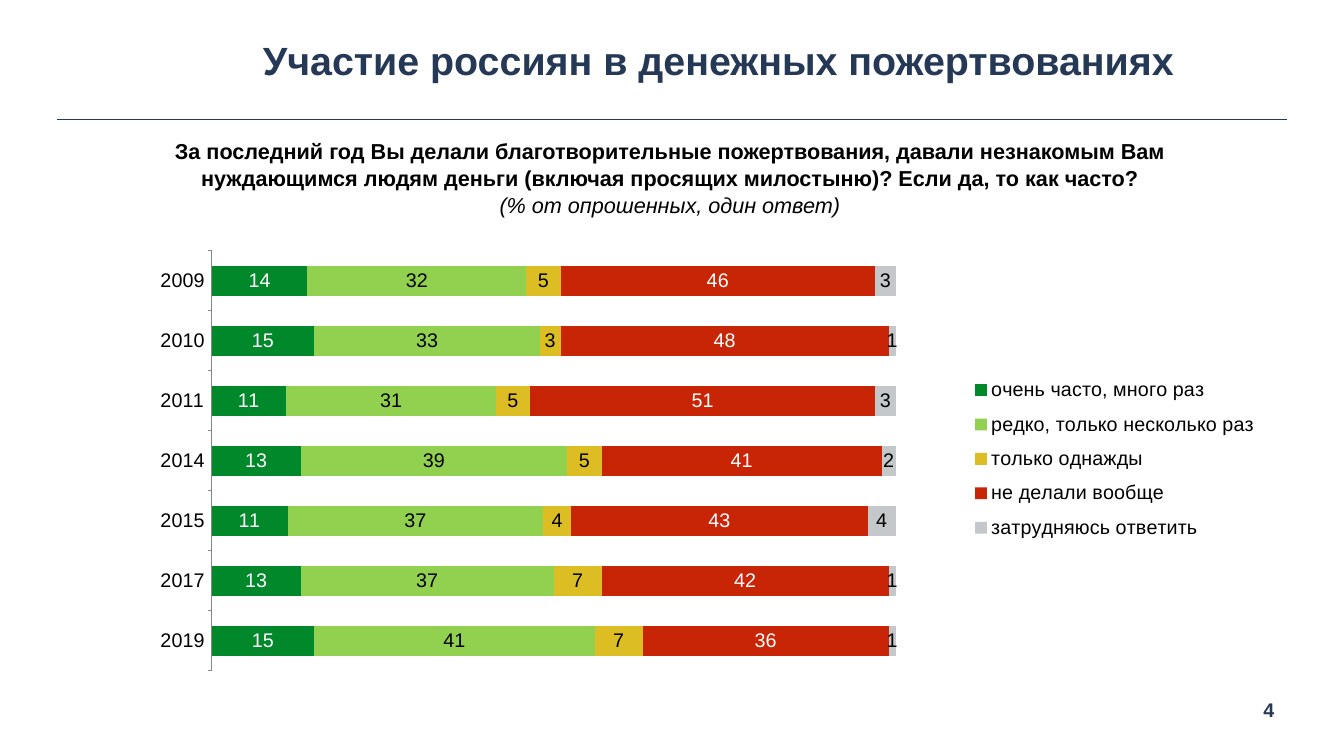
from pptx import Presentation
from pptx.chart.data import CategoryChartData
from pptx.dml.color import RGBColor
from pptx.enum.chart import XL_CHART_TYPE, XL_LEGEND_POSITION, XL_TICK_LABEL_POSITION, XL_TICK_MARK
from pptx.enum.shapes import MSO_CONNECTOR
from pptx.enum.text import MSO_ANCHOR, PP_ALIGN
from pptx.oxml import parse_xml
from pptx.oxml.ns import nsdecls
from pptx.util import Pt

BARS = XL_CHART_TYPE.BAR_STACKED_100
RIGHT = XL_LEGEND_POSITION.RIGHT
LOW = XL_TICK_LABEL_POSITION.LOW
OUTSIDE, NO_TICK = XL_TICK_MARK.OUTSIDE, XL_TICK_MARK.NONE
STRAIGHT = MSO_CONNECTOR.STRAIGHT
TOP, MIDDLE = MSO_ANCHOR.TOP, MSO_ANCHOR.MIDDLE
CENTER = PP_ALIGN.CENTER

NAVY = RGBColor(0x25, 0x39, 0x57)
BLACK = RGBColor(0x00, 0x00, 0x00)
WHITE = RGBColor(0xFF, 0xFF, 0xFF)
GRAY = RGBColor(0x86, 0x86, 0x86)
GREEN = RGBColor(0x00, 0x88, 0x2B)
LIME = RGBColor(0x92, 0xD0, 0x50)
GOLD = RGBColor(0xDC, 0xBD, 0x23)
RED = RGBColor(0xC8, 0x25, 0x06)
SILVER = RGBColor(0xC4, 0xC8, 0xCB)

FONT = "Arial"
WIDTH, HEIGHT = 1365.12, 768.24
YEARS = ["2019", "2017", "2015", "2014", "2011", "2010", "2009"]
ANSWERS = [
    ("очень часто, много раз", GREEN, WHITE, [15, 13, 11, 13, 11, 15, 14]),
    ("редко, только несколько раз", LIME, BLACK, [41, 37, 37, 39, 31, 33, 32]),
    ("только однажды", GOLD, BLACK, [7, 7, 4, 5, 5, 3, 5]),
    ("не делали вообще", RED, WHITE, [36, 42, 43, 41, 51, 48, 46]),
    ("затрудняюсь ответить", SILVER, BLACK, [1, 1, 4, 2, 3, 1, 3]),
]
TITLE = "Участие россиян в денежных пожертвованиях"
QUERY = ("За последний год Вы делали благотворительные пожертвования, "
         "давали незнакомым Вам нуждающимся людям деньги "
         "(включая просящих милостыню)? Если да, то как часто?")
BASE = "(% от опрошенных, один ответ)"


def style(font, size, color, bold=False, italic=False):
    font.name = FONT
    font.size = Pt(size)
    font.color.rgb = color
    font.bold = bold
    font.italic = italic


def add_text(slide, box, text, size, color, anchor=TOP, wrap=True):
    frame = slide.shapes.add_textbox(*map(Pt, box)).text_frame
    frame.word_wrap = wrap
    frame.vertical_anchor = anchor
    frame.margin_left = frame.margin_right = Pt(6.5)
    frame.margin_top = frame.margin_bottom = Pt(6.5)
    frame.text = text
    for para in frame.paragraphs:
        para.alignment = CENTER
        for run in para.runs:
            style(run.font, size, color, bold=True)
    return frame


def add_header(slide, box):
    left, top, width, height = box
    add_text(slide, (left + 96.5, top, width - 99.5, 76.3), TITLE, 40, NAVY, MIDDLE)
    base = top + height
    rule = slide.shapes.add_connector(
        STRAIGHT, Pt(left), Pt(base), Pt(left + width), Pt(base))
    rule.line.color.rgb = NAVY
    rule.line.width = Pt(1)
    rule._element.spPr.append(parse_xml(f"<a:effectLst {nsdecls('a')}/>"))


def add_query(slide, box):
    frame = add_text(slide, box, f"{QUERY}\n{BASE}", 22, BLACK)
    for para in frame.paragraphs:
        para.line_spacing = 1.05
    style(frame.paragraphs[1].runs[0].font, 22, BLACK, italic=True)


def make_layout(x, y, w, h, inner=False):
    target = '<c:layoutTarget val="inner"/>' if inner else ""
    return parse_xml(
        f"<c:layout {nsdecls('c')}><c:manualLayout>{target}"
        '<c:xMode val="edge"/><c:yMode val="edge"/>'
        f'<c:x val="{x}"/><c:y val="{y}"/><c:w val="{w}"/><c:h val="{h}"/>'
        "</c:manualLayout></c:layout>")


def set_layout(parent, layout, index):
    for old in parent.findall(layout.tag):
        parent.remove(old)
    parent.insert(index, layout)


def add_bars(slide, box):
    data = CategoryChartData(number_format="0")
    data.categories = YEARS
    for name, _, _, values in ANSWERS:
        data.add_series(name, values)
    chart = slide.shapes.add_chart(BARS, *map(Pt, box), data).chart
    style(chart.font, 20, BLACK)
    chart.has_title = False
    plot = chart.plots[0]
    plot.gap_width = 100
    plot.overlap = 100
    plot.vary_by_categories = False

    for series, (_, fill, ink, _) in zip(plot.series, ANSWERS):
        series.format.fill.solid()
        series.format.fill.fore_color.rgb = fill
        labels = series.data_labels
        labels.show_value = True
        labels.number_format = "0"
        labels.number_format_is_linked = False
        style(labels.font, 20, ink)

    years = chart.category_axis
    years.major_tick_mark = OUTSIDE
    years.minor_tick_mark = NO_TICK
    years.tick_label_position = LOW
    years.format.line.color.rgb = GRAY
    years.format.line.width = Pt(0.75)
    chart.value_axis.visible = False
    chart.value_axis.has_major_gridlines = False

    chart.has_legend = True
    legend = chart.legend
    legend.position = RIGHT
    legend.include_in_layout = False
    style(legend.font, 20, BLACK)
    set_layout(legend._element, make_layout(0.72, 0.27, 0.27, 0.43), 1)
    area = chart._chartSpace.chart.plotArea
    set_layout(area, make_layout(0.084, 0, 0.584, 0.978, inner=True), 0)


def add_number(slide, box):
    add_text(slide, box, "4", 20, NAVY, wrap=False)


def main():
    deck = Presentation()
    deck.slide_width, deck.slide_height = Pt(WIDTH), Pt(HEIGHT)
    slide = deck.slides.add_slide(deck.slide_layouts[6])
    add_header(slide, (58.3, 23, 1249.2, 98.7))
    add_query(slide, (115.2, 131.8, 1130.4, 92))
    add_bars(slide, (115.2, 254.2, 1189.4, 437))
    add_number(slide, (1270, 702.7, 37.5, 37.5))
    deck.save("out.pptx")


if __name__ == "__main__":
    main()
